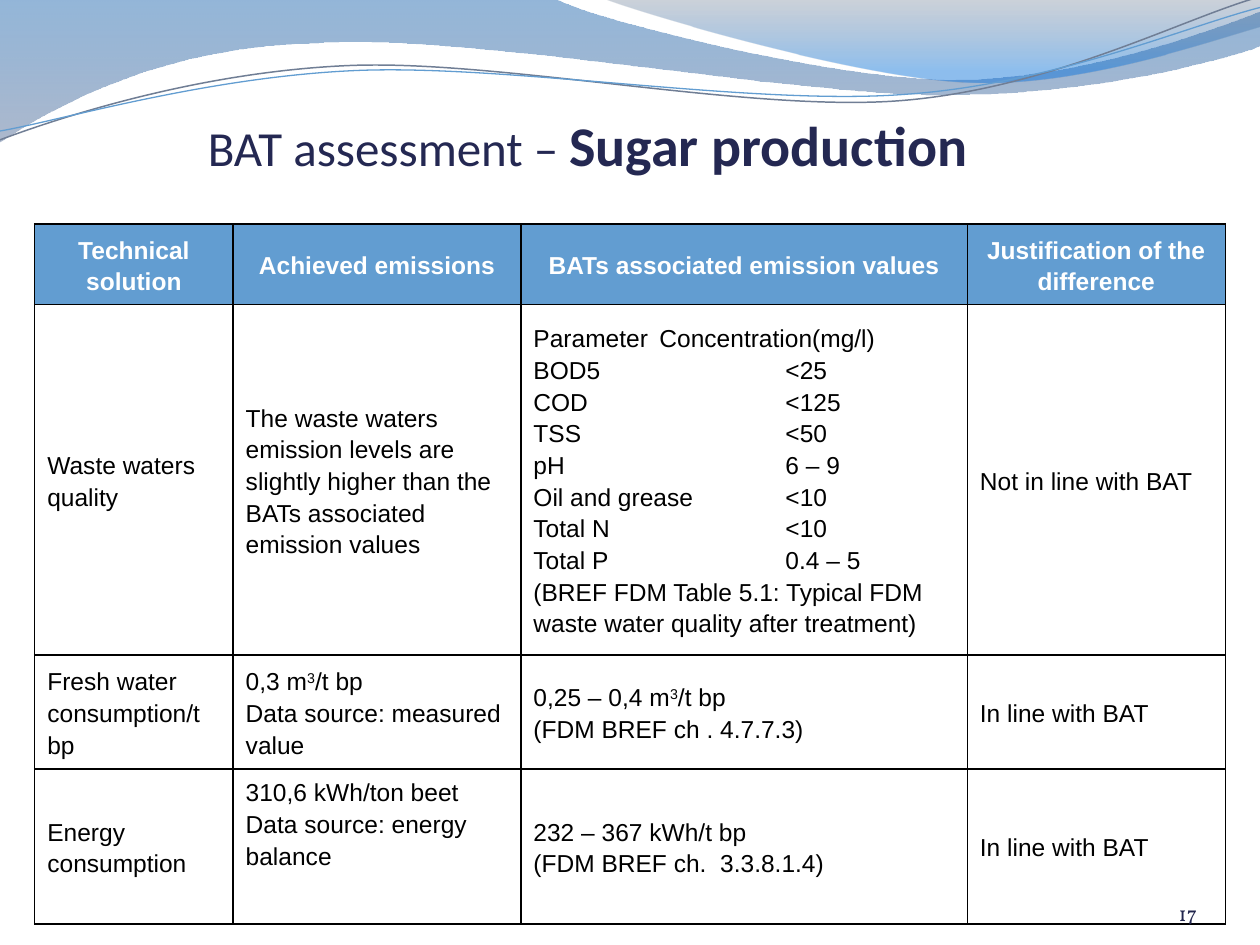
"""Builds the BAT assessment slide for sugar production."""
import math
from dataclasses import dataclass

import lxml.etree
import pptx
import pptx.dml.color
import pptx.enum.text
import pptx.oxml.ns
import pptx.util

Cm, Pt = pptx.util.Cm, pptx.util.Pt
PP_ALIGN, MSO_ANCHOR = pptx.enum.text.PP_ALIGN, pptx.enum.text.MSO_ANCHOR
qn = pptx.oxml.ns.qn
CM_PER_INCH = 2.54
COLORS = {
    "title": "242852", "number": "22264E", "header": "629DD1",
    "white": "FFFFFF", "black": "000000",
    "band_top": "125EAA", "band_bottom": "697FA4",
    "corner_top": "596982", "corner_bottom": "0670DA",
    "wave_grey": "707E95", "wave_blue": "629DD1",
}
Step = tuple[float, ...]


@dataclass
class Stop:
    """A gradient stop with its opacity in percent."""
    position: float
    color: str
    opacity: int


@dataclass
class Band:
    """A closed outline, in inches; six-number steps are Bézier curves."""
    steps: list[Step]
    stops: tuple[Stop, Stop]


@dataclass
class Wave:
    """An open tilted line, in inches, turned about its centre."""
    steps: list[Step]
    color: str
    width: float
    center: tuple[float, float]
    rotation: float = 357.3


@dataclass
class Cell:
    """The paragraphs of a table cell; carets enclose superscripts."""
    lines: list[str]
    anchor: MSO_ANCHOR = MSO_ANCHOR.MIDDLE


BANDS = [
    Band([(0, 0), (4.4, -0.01), (4.76, 0.17, 6.64, 0.63, 7.58, 0.63),
          (8.53, 0.63, 9.58, 0.26, 10, 0.09), (10.01, 0.36),
          (9.83, 0.44, 8.7, 0.76, 7.46, 0.75),
          (6.22, 0.75, 3.82, 0.28, 2.57, 0.34),
          (1.29, 0.36, 0.46, 0.83, -0.01, 1.13), (0, 0)],
         (Stop(0, "band_top", 45), Stop(1, "band_bottom", 55))),
    Band([(4.79, -0.01), (5.09, 0.11, 6.82, 0.62, 7.69, 0.65),
          (8.56, 0.69, 9.61, 0.32, 10, 0.21), (10, 0), (4.79, -0.01)],
         (Stop(0, "corner_top", 30), Stop(0.8, "corner_bottom", 45))),
]
WAVES = [
    Wave([(0, 1.11), (0.48, 0.93, 1.58, 0.57, 2.77, 0.52),
          (3.95, 0.47, 5.93, 0.89, 7.13, 0.8),
          (8.33, 0.71, 9.38, 0.15, 9.98, -0.02)],
         "wave_grey", 0.85, (4.99, 0.58)),
    Wave([(0, 1.04), (0.47, 0.96, 1.64, 0.61, 2.83, 0.56),
          (4.03, 0.51, 5.97, 0.84, 7.17, 0.75),
          (8.36, 0.67, 9.41, 0.21, 10, 0.06)],
         "wave_blue", 0.75, (5, 0.59)),
]
COLUMNS = [4, 5.8, 9, 5.2]
ROWS = [1.62, 7.06, 2.29, 3.12]
TAB_STOPS = [2.54, 5.08]
CELLS = [
    [Cell(["Technical solution"]), Cell(["Achieved emissions"]),
     Cell(["BATs associated emission values"]), Cell(["Justification of the difference"])],
    [Cell(["Waste waters quality"]),
     Cell(["The waste waters emission levels are slightly higher than the "
           "BATs associated emission values"]),
     Cell(["Parameter \tConcentration(mg/l)", "BOD5 \t\t<25", "COD \t\t<125",
           "TSS \t\t<50", "pH \t\t6 – 9", "Oil and grease \t<10",
           "Total N \t\t<10", "Total P \t\t0.4 – 5",
           "(BREF FDM Table 5.1: Typical FDM waste water quality after treatment)"]),
     Cell(["Not in line with BAT"])],
    [Cell(["Fresh water consumption/t bp"]),
     Cell(["0,3 m^3^/t bp", "Data source: measured value"]),
     Cell(["0,25 – 0,4 m^3^/t bp", "(FDM BREF ch . 4.7.7.3)"]),
     Cell(["In line with BAT"])],
    [Cell(["Energy consumption"]),
     Cell(["310,6 kWh/ton beet", "Data source: energy balance"], MSO_ANCHOR.TOP),
     Cell(["232 – 367 kWh/t bp", "(FDM BREF ch.  3.3.8.1.4)"]),
     Cell(["In line with BAT"])],
]


def rgb(name: str) -> pptx.dml.color.RGBColor:
    """Return a named colour."""
    return pptx.dml.color.RGBColor.from_string(COLORS[name])


def add_outline(s, steps: list[Step], close: bool):
    """Add a freeform whose six-number steps become Bézier curves."""
    first, *rest = [(Cm(x * CM_PER_INCH), Cm(y * CM_PER_INCH))
                    for step in steps for x, y in zip(step[::2], step[1::2])]
    builder = s.shapes.build_freeform(*first)
    builder.add_line_segments(rest, close=close)
    sp = builder.convert_to_shape()
    sp.shadow.inherit = False
    lines = iter(list(sp._element.iter(qn("a:lnTo"))))
    for step in steps[1:]:
        line = next(lines)
        if len(step) == 6:
            line.tag = qn("a:cubicBezTo")
            for _ in range(2):
                extra = next(lines)
                line.append(extra[0])
                extra.getparent().remove(extra)
    return sp


def add_band(s, band: Band) -> None:
    """Draw a band with a translucent vertical gradient."""
    sp = add_outline(s, band.steps, True)
    sp.line.fill.background()
    sp.fill.gradient()
    sp.fill.gradient_angle = 270
    for target, stop in zip(sp.fill.gradient_stops, band.stops):
        target.position = stop.position
        target.color.rgb = rgb(stop.color)
    for color, stop in zip(sp._element.spPr.iter(qn("a:srgbClr")), band.stops):
        lxml.etree.SubElement(color, qn("a:alpha")).set("val", str(stop.opacity * 1000))


def add_wave(s, wave: Wave) -> None:
    """Draw a wave level, then tilt it."""
    angle = math.radians(-wave.rotation)
    cos, sin = math.cos(angle), math.sin(angle)
    cx, cy = wave.center
    level = []
    for step in wave.steps:
        turned = [(cx + (x - cx) * cos - (y - cy) * sin, cy + (x - cx) * sin + (y - cy) * cos)
                  for x, y in zip(step[::2], step[1::2])]
        level.append(tuple(value for point in turned for value in point))
    sp = add_outline(s, level, False)
    sp.rotation = wave.rotation
    sp.fill.background()
    sp.line.color.rgb = rgb(wave.color)
    sp.line.width = Pt(wave.width)


def style(p, font: str, color: str, size: float | None = None, bold: bool | None = None) -> None:
    """Set the font shared by a paragraph's runs."""
    p.font.name, p.font.bold = font, bold
    p.font.color.rgb = rgb(color)
    if size:
        p.font.size = Pt(size)


def add_text(s, box: tuple[float, ...], inset_top: float = 0):
    """Add a bottom-anchored text box and return its paragraph."""
    tf = s.shapes.add_textbox(*map(Cm, box)).text_frame
    tf.word_wrap = True
    tf.vertical_anchor = MSO_ANCHOR.BOTTOM
    tf.margin_left = tf.margin_right = tf.margin_bottom = 0
    tf.margin_top = Cm(inset_top)
    return tf.paragraphs[0]


def add_tabs(p) -> None:
    """Give a paragraph the tab stops of the value list."""
    tabs = lxml.etree.Element(qn("a:tabLst"))
    for stop in TAB_STOPS:
        lxml.etree.SubElement(tabs, qn("a:tab"), pos=str(Cm(stop)), algn="l")
    p._p.pPr.find(qn("a:defRPr")).addprevious(tabs)


def add_borders(cell) -> None:
    """Give a table cell thin black borders."""
    tc_pr = cell._tc.get_or_add_tcPr()
    for side in ("a:lnL", "a:lnR", "a:lnT", "a:lnB"):
        ln = lxml.etree.SubElement(tc_pr, qn(side), w=str(Pt(1)))
        fill = lxml.etree.SubElement(ln, qn("a:solidFill"))
        lxml.etree.SubElement(fill, qn("a:srgbClr"), val=COLORS["black"])


def fill_cell(cell, content: Cell, header: bool, first: bool) -> None:
    """Write and format one table cell."""
    add_borders(cell)
    if header:
        cell.fill.solid()
        cell.fill.fore_color.rgb = rgb("header")
    else:
        cell.fill.background()
    cell.vertical_anchor = content.anchor
    tf = cell.text_frame
    for i, line in enumerate(content.lines):
        p = tf.add_paragraph() if i else tf.paragraphs[0]
        p.line_spacing = 1.15
        style(p, "Arial", "white" if header else "black", 14, header)
        if header:
            p.alignment = PP_ALIGN.CENTER
        elif first:
            p.space_after = Pt(10)
        if "\t" in line:
            add_tabs(p)
        for j, part in enumerate(line.split("^")):
            r = p.add_run()
            r.text = part
            if j % 2:
                r.font._element.set("baseline", "30000")


def add_table(s) -> None:
    """Add the assessment table."""
    table = s.shapes.add_table(len(ROWS), len(COLUMNS), Cm(0.7), Cm(4.52),
                               Cm(sum(COLUMNS)), Cm(sum(ROWS))).table
    table.first_row = table.horz_banding = False
    for column, width in zip(table.columns, COLUMNS):
        column.width = Cm(width)
    for i, (row, height) in enumerate(zip(table.rows, ROWS)):
        row.height = Cm(height)
        for j, cell in enumerate(row.cells):
            fill_cell(cell, CELLS[i][j], i == 0, j == 0)


def main() -> None:
    """Build and save the slide."""
    prs = pptx.Presentation()
    prs.slide_width, prs.slide_height = Cm(25.4), Cm(19.05)
    s = prs.slides.add_slide(prs.slide_layouts[6])
    for band in BANDS:
        add_band(s, band)
    for wave in WAVES:
        add_wave(s, wave)
    p = add_text(s, (4.19, 1.19, 18.19, 2.39), 0.13)
    style(p, "Calibri", "title")
    for text, size, bold in (("BAT assessment – ", 28, False), ("Sugar production", 32, True)):
        r = p.add_run()
        r.text, r.font.size, r.font.bold = text, Pt(size), bold
    add_table(s)
    p = add_text(s, (22.02, 17.65, 2.11, 1.02))
    p.alignment = PP_ALIGN.RIGHT
    style(p, "Vollkorn", "number", 12)
    p.add_run().text = "17"
    prs.save("out.pptx")


if __name__ == "__main__":
    main()
